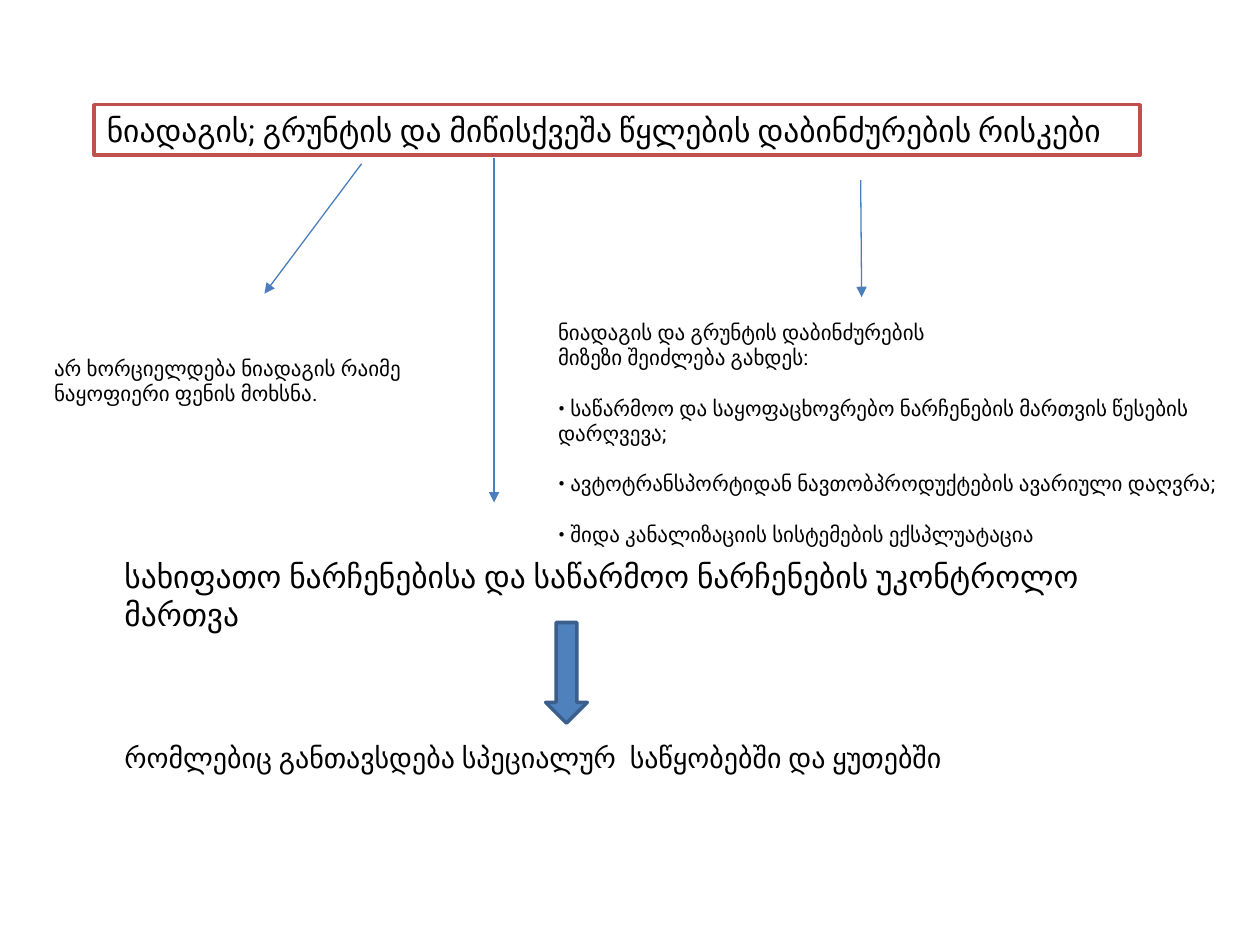
from pptx import Presentation
from pptx.dml.color import RGBColor
from pptx.enum.shapes import MSO_CONNECTOR as Connector, MSO_SHAPE as Shape
from pptx.enum.text import MSO_ANCHOR as Anchor, MSO_AUTO_SIZE as AutoSize, PP_ALIGN as Align
from pptx.oxml.ns import qn
from pptx.util import Cm, Pt
from lxml.etree import SubElement

BLACK = RGBColor(0x00, 0x00, 0x00)
WHITE = RGBColor(0xFF, 0xFF, 0xFF)
RED = RGBColor(0xC0, 0x50, 0x4D)
BLUE = RGBColor(0x4F, 0x81, 0xBD)
LINE_BLUE = RGBColor(0x4B, 0x7E, 0xBC)
DARK_BLUE = RGBColor(0x3A, 0x5F, 0x8C)


class RiskSlide:
    """Draws the risk diagram on one slide in a shared style."""

    font = "Roboto"
    frame_format = {"word_wrap": True, "auto_size": AutoSize.NONE, "vertical_anchor": Anchor.TOP}
    paragraph_format = {"alignment": Align.LEFT, "space_before": Pt(0)}

    def __init__(self, deck):
        self.slide = deck.slides.add_slide(deck.slide_layouts[5])

    def apply(self, target, values):
        for attribute, value in values.items():
            setattr(target, attribute, value)

    def outline(self, shape, fill, line, width):
        shape.fill.solid()
        shape.fill.fore_color.rgb = fill
        shape.line.color.rgb = line
        shape.line.width = Pt(width)

    def add_words(self, paragraph, words, size, font=None):
        run = paragraph.add_run()
        run.text = words
        self.apply(run.font, {"name": font or self.font, "size": Pt(size)})
        run.font.color.rgb = BLACK

    def title(self, box, parts, size):
        heading = self.slide.shapes.title
        self.apply(heading, dict(zip(("left", "top", "width", "height"), map(Cm, box))))
        self.outline(heading, WHITE, RED, 2)
        self.apply(heading.text_frame, self.frame_format)
        paragraph = heading.text_frame.paragraphs[0]
        self.apply(paragraph, self.paragraph_format)
        for words, font in parts:
            self.add_words(paragraph, words, size, font)

    def text(self, box, lines, size, bullet_gap=0):
        frame = self.slide.shapes.add_textbox(*map(Cm, box)).text_frame
        self.apply(frame, self.frame_format)
        for index, line in enumerate(lines):
            paragraph = frame.add_paragraph() if index else frame.paragraphs[0]
            self.apply(paragraph, self.paragraph_format)
            if line.startswith("•"):
                paragraph.space_before = Pt(bullet_gap)
            self.add_words(paragraph, line, size)

    def arrow(self, start, end):
        link = self.slide.shapes.add_connector(Connector.STRAIGHT, *map(Cm, start + end))
        link.line.color.rgb = LINE_BLUE
        link.line.width = Pt(0.75)
        properties = link.element.spPr
        SubElement(properties.get_or_add_ln(), qn("a:tailEnd"), type="triangle")
        SubElement(properties, qn("a:effectLst"))

    def block_arrow(self, box):
        block = self.slide.shapes.add_shape(Shape.DOWN_ARROW, *map(Cm, box))
        block.shadow.inherit = False
        self.outline(block, BLUE, DARK_BLUE, 2)


def main():
    deck = Presentation()
    deck.slide_width, deck.slide_height = Cm(25.4), Cm(19.05)
    risks = RiskSlide(deck)

    risks.title((1.9, 2.11, 21.08, 1.02), [
        ("ნიადაგის; გრუნტის და ", "Roboto"),
        ("მიწისქვეშა წყლების დაბინძურების რისკები", "Calibri"),
    ], 18)
    risks.text((0.84, 7.04, 9.09, 1.27),
               ["არ ხორციელდება ნიადაგის რაიმე ნაყოფიერი ფენის მოხსნა."], 12)
    risks.text((11, 6.32, 14.6, 4.37), [
        "ნიადაგის და გრუნტის დაბინძურების",
        "მიზეზი შეიძლება გახდეს:",
        "• საწარმოო და საყოფაცხოვრებო ნარჩენების მართვის წესების დარღვევა;",
        "• ავტოტრანსპორტიდან ნავთობპროდუქტების ავარიული დაღვრა;",
        "• შიდა კანალიზაციის სისტემების ექსპლუატაცია",
    ], 12, bullet_gap=14.4)
    risks.text((2.26, 11.1, 21.51, 1.02),
               ["სახიფათო ნარჩენებისა და საწარმოო ნარჩენების უკონტროლო მართვა"], 18)
    risks.text((2.26, 14.81, 19.69, 0.94),
               ["რომლებიც განთავსდება სპეციალურ  საწყობებში და ყუთებში"], 16)

    for start, end in (
        ((7.29, 3.3), (5.33, 5.92)),
        ((17.35, 3.63), (17.37, 5.99)),
        ((9.96, 3.18), (9.96, 10.13)),
    ):
        risks.arrow(start, end)
    risks.block_arrow((11, 12.55, 0.84, 2.03))

    deck.save("out.pptx")


if __name__ == "__main__":
    main()
